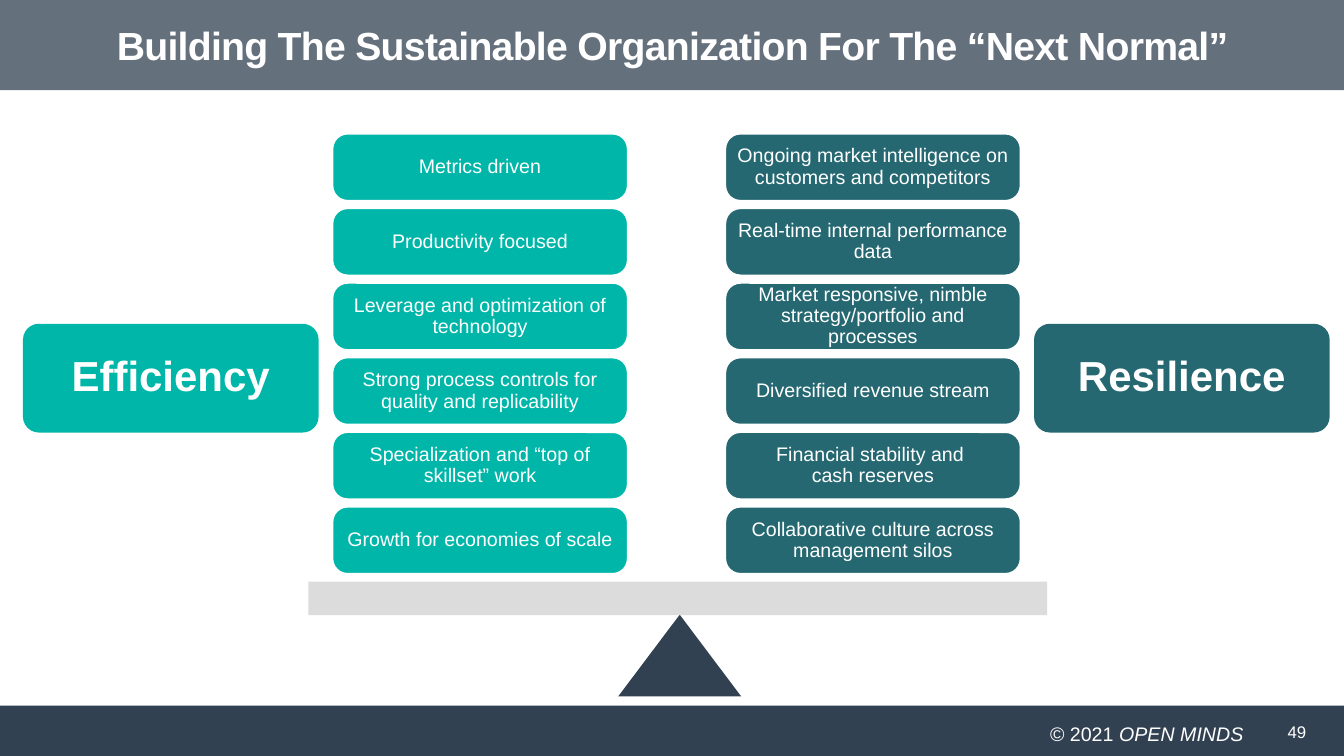
from lxml.etree import SubElement
from pptx import Presentation
from pptx.dml.color import RGBColor
from pptx.enum.shapes import MSO_SHAPE as Shape
from pptx.enum.text import MSO_ANCHOR as Anchor, PP_ALIGN as Align
from pptx.oxml.ns import qn
from pptx.util import Cm, Pt

COLORS = {
    "navy": "324152",
    "teal": "00B6A9",
    "petrol": "256871",
    "gray": "D9D9D9",
    "white": "FFFFFF",
}


class SlideBuilder:
    font_name = "Arial"

    def __init__(self, slide):
        self.slide = slide

    def color(self, name):
        return RGBColor.from_string(COLORS[name])

    def fill_text(self, shape, parts, size, bold=False, align=Align.CENTER,
                  anchor=Anchor.MIDDLE, spacing=1.0, tracking=None, insets=(0.25, 0.13)):
        side, vertical = Cm(insets[0]), Cm(insets[1])
        frame_format = {
            "word_wrap": True, "vertical_anchor": anchor,
            "margin_left": side, "margin_right": side,
            "margin_top": vertical, "margin_bottom": vertical,
        }
        for name, value in frame_format.items():
            setattr(shape.text_frame, name, value)
        paragraph = shape.text_frame.paragraphs[0]
        for name, value in {"alignment": align, "line_spacing": spacing}.items():
            setattr(paragraph, name, value)
        for index, (text, italic) in enumerate(parts):
            if index:
                paragraph.add_run().text = text
            else:
                paragraph.text = text
            font_format = {"name": self.font_name, "size": Pt(size),
                           "bold": bold, "italic": italic}
            for run in paragraph.runs[index:]:
                for name, value in font_format.items():
                    setattr(run.font, name, value)
                run.font.color.rgb = self.color("white")
                if tracking:
                    run.font._element.set("spc", str(tracking))

    def shape(self, kind, box, fill, opacity=100, outline=None):
        shape = self.slide.shapes.add_shape(kind, *map(Cm, box))
        shape.shadow.inherit = False
        shape.fill.solid()
        shape.fill.fore_color.rgb = self.color(fill)
        if opacity < 100:
            color_element = shape._element.spPr.find(".//" + qn("a:srgbClr"))
            SubElement(color_element, qn("a:alpha"), val=str(opacity * 1000))
        if outline:
            shape.line.color.rgb = self.color(outline)
            shape.line.width = Pt(1.25)
        else:
            shape.line.fill.background()
        return shape

    def card(self, box, fill, text, size, radius, inset, bold=False, outline=None):
        shape = self.shape(Shape.ROUNDED_RECTANGLE, box, fill, outline=outline)
        shape.adjustments[0] = radius / box[3]
        self.fill_text(shape, [(text, False)], size, bold, spacing=0.9,
                       insets=(inset, inset))

    def text(self, box, parts, size, **style):
        shape = self.slide.shapes.add_textbox(*map(Cm, box))
        self.fill_text(shape, parts, size, **style)


SIDES = [
    ("Efficiency", "teal", 0.58, 8.38, [
        "Metrics driven",
        "Productivity focused",
        "Leverage and optimization of technology",
        "Strong process controls for quality and replicability",
        "Specialization and “top of skillset” work",
        "Growth for economies of scale",
    ]),
    ("Resilience", "petrol", 26.06, 18.28, [
        "Ongoing market intelligence on customers and competitors",
        "Real-time internal performance data",
        "Market responsive, nimble strategy/portfolio and processes",
        "Diversified revenue stream",
        "Financial stability and \vcash reserves",
        "Collaborative culture across management silos",
    ]),
]
CARD_TOP, CARD_PITCH = 3.37, 1.88


def main():
    presentation = Presentation()
    presentation.slide_width, presentation.slide_height = Cm(33.87), Cm(19.05)
    slide = presentation.slides.add_slide(presentation.slide_layouts[6])
    builder = SlideBuilder(slide)

    builder.shape(Shape.RECTANGLE, (0, 17.78, 33.87, 1.27), "navy")
    builder.text((4.45, 18.08, 27.12, 0.82),
                 [("© 2021 ", False), ("OPEN MINDS", True)], 14,
                 align=Align.RIGHT, anchor=Anchor.TOP, insets=(0.23, 0.1))
    builder.shape(Shape.RECTANGLE, (0, 0, 33.87, 2.27), "navy", opacity=75)

    builder.shape(Shape.ISOSCELES_TRIANGLE, (15.58, 15.49, 3.1, 2.06), "navy")
    builder.shape(Shape.RECTANGLE, (7.77, 14.66, 18.62, 0.84), "gray", opacity=90)

    for heading, fill, heading_left, card_left, items in SIDES:
        builder.card((heading_left, 8.16, 7.45, 2.74), fill, heading, 30,
                     radius=0.4, inset=0.25, bold=True)
        for row, item in enumerate(items):
            top = CARD_TOP + row * CARD_PITCH
            builder.card((card_left, top, 7.44, 1.69), fill, item, 14,
                         radius=0.38, inset=0.12, outline="white")

    builder.text((32.2, 17.93, 1.65, 1.02), [("49", False)], 12, align=Align.LEFT)
    builder.text((1.68, 0.25, 30.53, 1.96),
                 [("Building The Sustainable Organization For The “Next Normal”", False)],
                 28, bold=True, spacing=0.85, tracking=-50)
    presentation.save("out.pptx")


if __name__ == "__main__":
    main()
